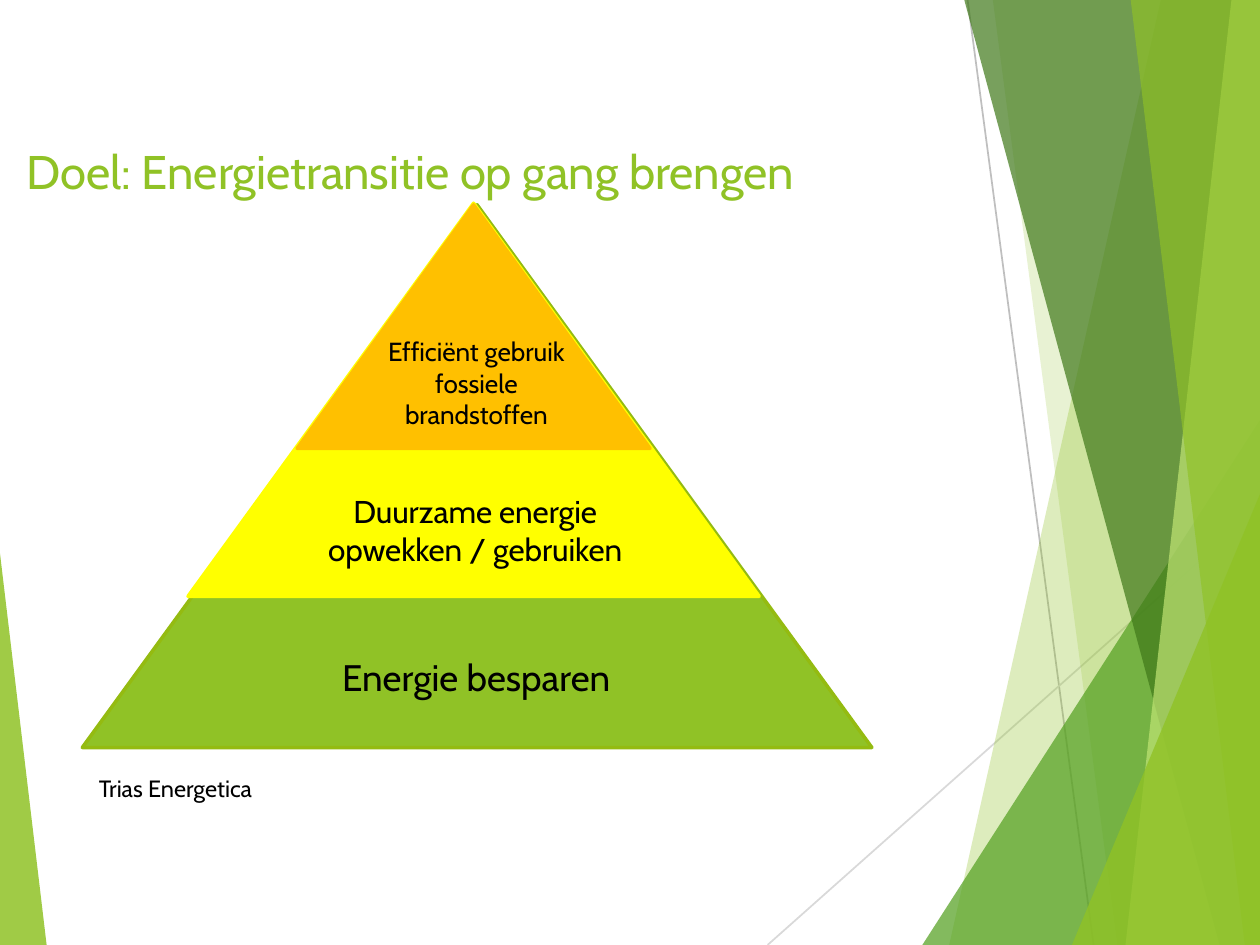
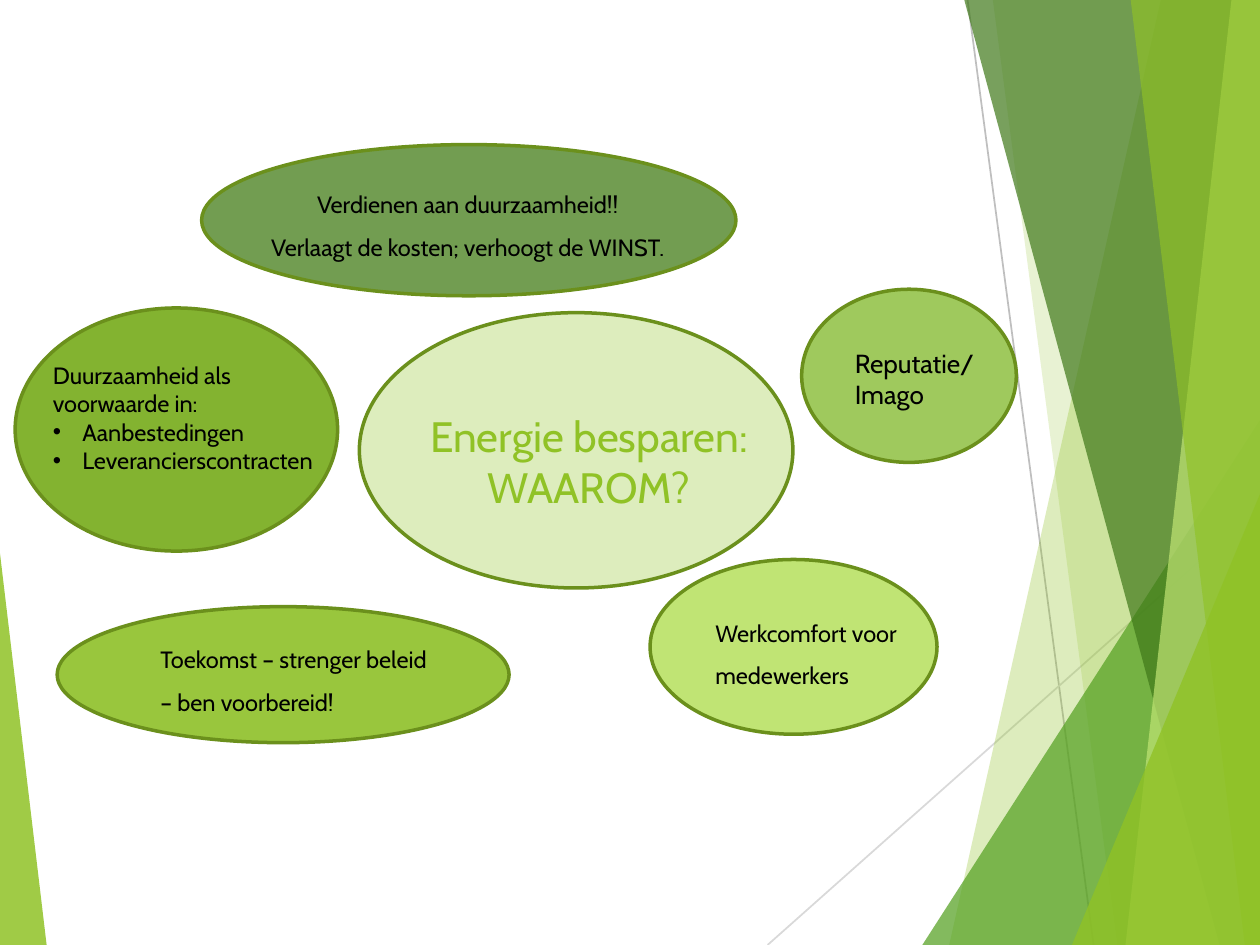
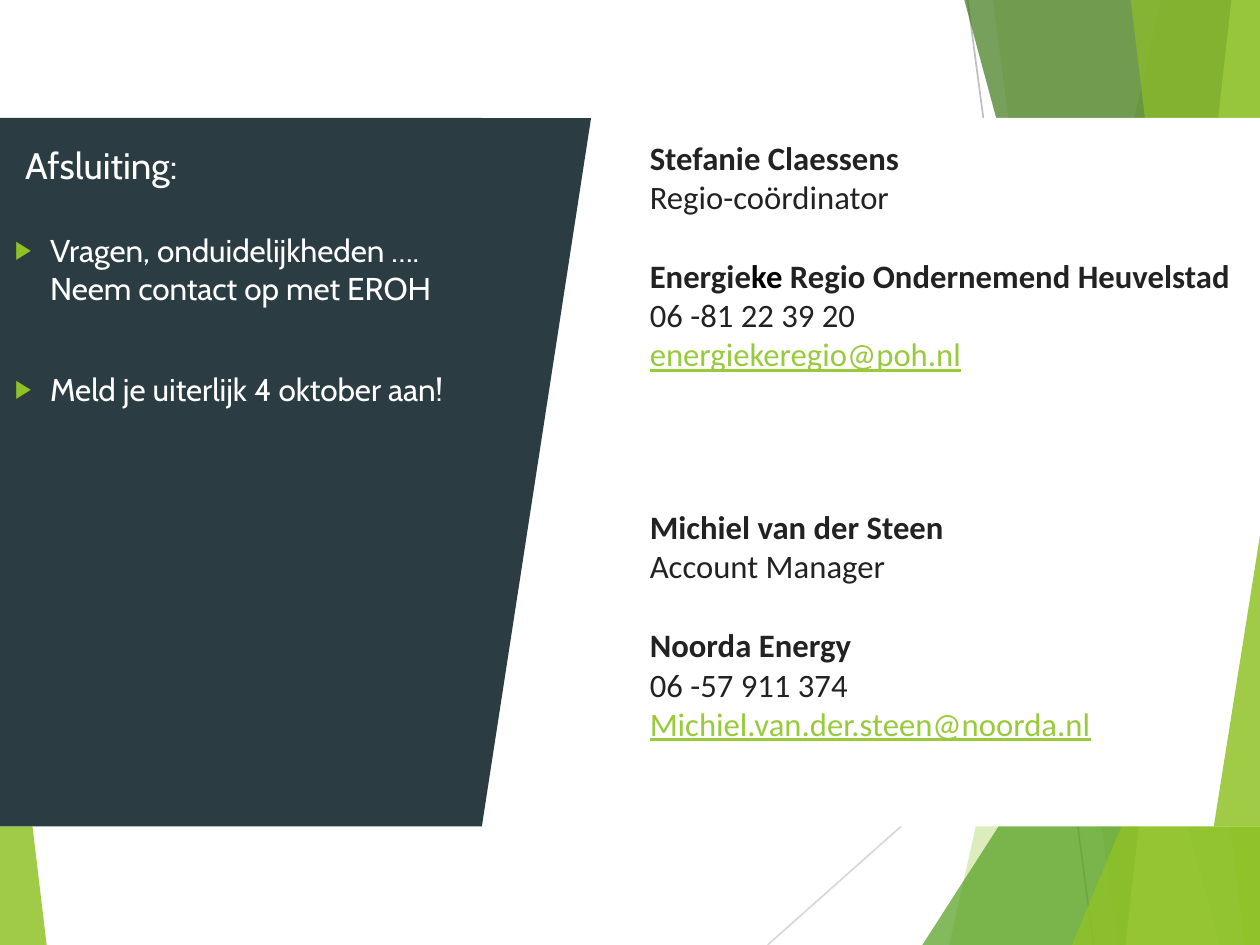
from dataclasses import dataclass

from lxml import etree
from pptx import Presentation
from pptx.dml.color import RGBColor
from pptx.enum.shapes import MSO_CONNECTOR, MSO_SHAPE as Preset
from pptx.enum.text import MSO_ANCHOR as Anchor, PP_ALIGN as Align
from pptx.oxml.ns import qn
from pptx.util import Pt


@dataclass(frozen=True)
class Theme:
    width: float = 540
    height: float = 405
    font: str = "Cabin"
    contact_font: str = "Calibri"

    lime: str = "90C226"
    leaf: str = "54A021"
    forest: str = "3F7819"
    pale: str = "C0E474"
    olive: str = "6B901C"
    pyramid_edge: str = "94BB11"
    yellow: str = "FFFF00"
    orange: str = "FFC000"
    slate: str = "2C3C43"
    link: str = "99CA3C"
    ink: str = "222222"
    black: str = "000000"
    white: str = "FFFFFF"
    mist: str = "DDEDBD"
    moss: str = "729D51"
    sage: str = "9FC95D"
    grass: str = "83B330"
    spring: str = "99C63D"
    rays: tuple = ("BFBFBF", "D9D9D9")

    headline: float = 20.2
    center: float = 18.2
    large: float = 15.8
    contact: float = 14
    medium: float = 13.5
    label: float = 11.2
    small: float = 10.1


THEME = Theme()


def rgb(color):
    return RGBColor.from_string(color)


def set_bullet(para, char, hang, color=None, percent=100):
    props = para._p.get_or_add_pPr()
    props.set("marL", str(Pt(hang)))
    props.set("indent", str(-Pt(hang)))
    if color:
        holder = etree.SubElement(props, qn("a:buClr"))
        etree.SubElement(holder, qn("a:srgbClr"), val=color)
    etree.SubElement(props, qn("a:buSzPct"), val=str(percent * 1000))
    etree.SubElement(props, qn("a:buFont"), typeface="Arial")
    etree.SubElement(props, qn("a:buChar"), char=char)


def write(frame, text, size=THEME.small, color=THEME.black, font=THEME.font,
          bold=False, underline=False, align=Align.LEFT, spacing=1.0,
          before=0, joined=False):
    """Add a paragraph, or a span of the last one if joined, and return it."""
    para = frame.paragraphs[-1]
    if para.runs and not joined:
        para = frame.add_paragraph()
    if not joined:
        para.alignment = align
        para.line_spacing = spacing
        para.space_before = Pt(before)
    span = para.add_run()
    span.text = text
    span.font.name = font
    span.font.size = Pt(size)
    span.font.bold = bold
    span.font.underline = underline
    span.font.color.rgb = rgb(color)
    return para


class Board:
    """The deck, its style and the page being drawn."""

    def __init__(self, theme):
        self.theme = theme
        self.deck = Presentation()
        self.deck.slide_width = Pt(theme.width)
        self.deck.slide_height = Pt(theme.height)
        self.page = None

    def new_page(self):
        self.page = self.deck.slides.add_slide(self.deck.slide_layouts[5])

    def paint(self, shape, fill, edge=None, alpha=100):
        shape.shadow.inherit = False
        shape.fill.solid()
        shape.fill.fore_color.rgb = rgb(fill)
        if alpha < 100:
            tint = next(shape.element.iter(qn("a:srgbClr")))
            etree.SubElement(tint, qn("a:alpha"), val=str(alpha * 1000))
        if edge:
            shape.line.color.rgb = rgb(edge)
            shape.line.width = Pt(1.5)
        else:
            shape.line.fill.background()
        return shape

    def shape(self, preset, place, fill, edge=None, alpha=100):
        shape = self.page.shapes.add_shape(preset, *map(Pt, place))
        return self.paint(shape, fill, edge, alpha)

    def triangle(self, place, fill, apex=0.5, edge=None, alpha=100):
        shape = self.shape(Preset.ISOSCELES_TRIANGLE, place, fill, edge, alpha)
        shape.adjustments[0] = apex
        return shape

    def shard(self, top, bottom, fill, alpha):
        """Fill the page from a slanted left edge to its right side."""
        width, height = self.theme.width, self.theme.height
        outline = self.page.shapes.build_freeform(Pt(top), 0)
        corners = [(width, 0), (width, height), (bottom, height)]
        outline.add_line_segments([(Pt(x), Pt(y)) for x, y in corners])
        self.paint(outline.convert_to_shape(), fill, alpha=alpha)

    def ray(self, start, end, color):
        line = self.page.shapes.add_connector(
            MSO_CONNECTOR.STRAIGHT, *map(Pt, start + end))
        line.line.color.rgb = rgb(color)
        line.line.width = Pt(0.75)
        etree.SubElement(line.element.spPr, qn("a:effectLst"))

    def title(self, text, place, anchor=Anchor.TOP, **style):
        """Place the title above everything drawn so far."""
        box = self.page.shapes.title
        self.page.shapes.element.append(box.element)
        box.left, box.top, box.width, box.height = map(Pt, place)
        box.text_frame.word_wrap = True
        box.text_frame.vertical_anchor = anchor
        write(box.text_frame, text, **style)

    def text(self, place, *lines, **style):
        box = self.page.shapes.add_textbox(*map(Pt, place))
        box.text_frame.word_wrap = True
        for line in lines:
            write(box.text_frame, line, **style)
        return box.text_frame

    def move_to_master(self):
        """Hand the shapes of the page to the master, so all pages show them."""
        master = self.deck.slide_master.shapes.element
        drawn = [item for item in self.page.shapes if not item.is_placeholder]
        for number, item in enumerate(drawn, 100):
            next(item.element.iter(qn("p:cNvPr"))).set("id", str(number))
            master.append(item.element)


def draw_backdrop(board):
    theme = board.theme
    board.ray((414.7, 0), (468.7, 405), theme.rays[0])
    board.ray((540, 217.4), (329, 405), theme.rays[1])
    board.shard(497.5, 406.8, theme.lime, 30)
    board.shard(425.5, 478.8, theme.lime, 20)
    board.triangle((395.3, 180, 144.7, 225), theme.leaf, apex=1, alpha=72)
    board.shard(413.3, 522.7, theme.forest, 70)
    board.shard(527.8, 482.4, theme.pale, 70)
    board.shard(484.6, 533.5, theme.lime, 65)
    board.triangle((459.4, 211.7, 80.6, 193.3), theme.lime, apex=1, alpha=80)
    board.triangle((0, 237, 20, 168), theme.lime, apex=0, alpha=85)
    board.move_to_master()


def draw_pyramid(board):
    theme = board.theme
    board.title("Doel: Energietransitie op gang brengen", (4.3, 57.6, 380, 36),
                size=theme.headline, color=theme.lime)
    tiers = [
        ((35.3, 87.8, 338.4, 232.6), theme.lime, theme.pyramid_edge),
        ((80.6, 87.1, 244.8, 168.5), theme.yellow, theme.yellow),
        ((127.4, 87.8, 151.2, 104.4), theme.orange, theme.orange),
    ]
    for place, fill, edge in tiers:
        board.triangle(place, fill, edge=edge)
    board.text((157, 140.4, 94.3, 62), "Efficiënt gebruik",
               "fossiele brandstoffen", size=theme.label, align=Align.CENTER)
    board.text((97.2, 207.4, 213, 40), "Duurzame energie",
               "opwekken / gebruiken", size=theme.medium, align=Align.CENTER)
    board.text((116, 277.2, 176.4, 26.6), "Energie besparen",
               size=theme.large, align=Align.CENTER)
    board.text((35.3, 328.3, 139.7, 19.4), "Trias Energetica")


def draw_reasons(board):
    theme = board.theme

    def bubble(place, fill):
        board.shape(Preset.OVAL, place, fill, edge=theme.olive)

    bubble((154, 134, 185.8, 118), theme.mist)
    board.title("Energie besparen: WAAROM?", (165, 172, 175, 58.3),
                size=theme.center, color=theme.lime, align=Align.CENTER)

    bubble((86.4, 62, 229, 64.8), theme.moss)
    board.text((96.5, 72, 208, 41.8), "Verdienen aan duurzaamheid!!",
               "Verlaagt de kosten; verhoogt de WINST.",
               align=Align.CENTER, spacing=1.5)

    bubble((278.6, 239.8, 123, 74.9), theme.pale)
    board.text((299.5, 255.6, 113, 41.8), "Werkcomfort voor medewerkers",
               spacing=1.5)

    bubble((343.6, 124, 92, 74.2), theme.sage)
    board.text((359.3, 145.4, 70.6, 34.6), "Reputatie/", "Imago",
               size=theme.label)

    bubble((6.5, 132, 138.2, 104.2), theme.grass)
    terms = board.text((15.6, 151.2, 129.2, 68.4),
                       "Duurzaamheid als voorwaarde in:")
    for term in ("Aanbestedingen", "Leverancierscontracten"):
        set_bullet(write(terms, term), "•", 12.7)

    bubble((24.5, 260, 193.7, 58.3), theme.spring)
    board.text((61.6, 267, 131, 41.8),
               "Toekomst – strenger beleid – ben voorbereid!", spacing=1.5)


def draw_closing(board):
    theme = board.theme
    top, height, split = 50.6, 303.6, 206.5
    board.shape(Preset.RECTANGLE, (0, top, theme.width, height), theme.white)
    board.shape(Preset.RECTANGLE, (0, top, split, height), theme.slate)
    slope = board.triangle((split, top, 46.8, height), theme.slate, apex=1)
    slope.rotation = 180

    board.title("Afsluiting:", (3.6, top, 186.5, 40.3), anchor=Anchor.MIDDLE,
                size=theme.large, color=theme.white)
    calls = board.text((-0.7, 95.5, 206, 240))
    for call, gap in (
            ("Vragen, onduidelijkheden …. Neem contact op met EROH", 0),
            ("Meld je uiterlijk 4 oktober aan!", 27)):
        para = write(calls, call, size=theme.medium, color=theme.white,
                     before=gap)
        set_bullet(para, "▶", 15.1, theme.lime, 80)

    board.triangle((520.2, 228.2, 20, 126), theme.lime, apex=1, alpha=85)

    contacts = [
        (55.4, "Stefanie Claessens", "Regio-coördinator",
         [("Energie", theme.ink), ("ke", theme.black),
          (" Regio Ondernemend Heuvelstad", theme.ink)],
         "06 -81 22 39 20", "energiekeregio@poh.nl"),
        (213.8, "Michiel van der Steen", "Account Manager",
         [("Noorda Energy", theme.ink)],
         "06 -57 911 374", "Michiel.van.der.steen@noorda.nl"),
    ]
    style = {"size": theme.contact, "font": theme.contact_font}
    for y, name, role, company, phone, mail in contacts:
        frame = board.text((271.4, y, 270, 108.7), name, bold=True,
                           color=theme.ink, **style)
        write(frame, role, color=theme.ink, **style)
        for index, (part, color) in enumerate(company):
            write(frame, part, bold=True, color=color, before=17,
                  joined=index > 0, **style)
        write(frame, phone, color=theme.ink, **style)
        write(frame, mail, color=theme.link, underline=True, **style)


def main():
    board = Board(THEME)
    board.new_page()
    draw_backdrop(board)
    draw_pyramid(board)
    board.new_page()
    draw_reasons(board)
    board.new_page()
    draw_closing(board)
    board.deck.save("out.pptx")


if __name__ == "__main__":
    main()
